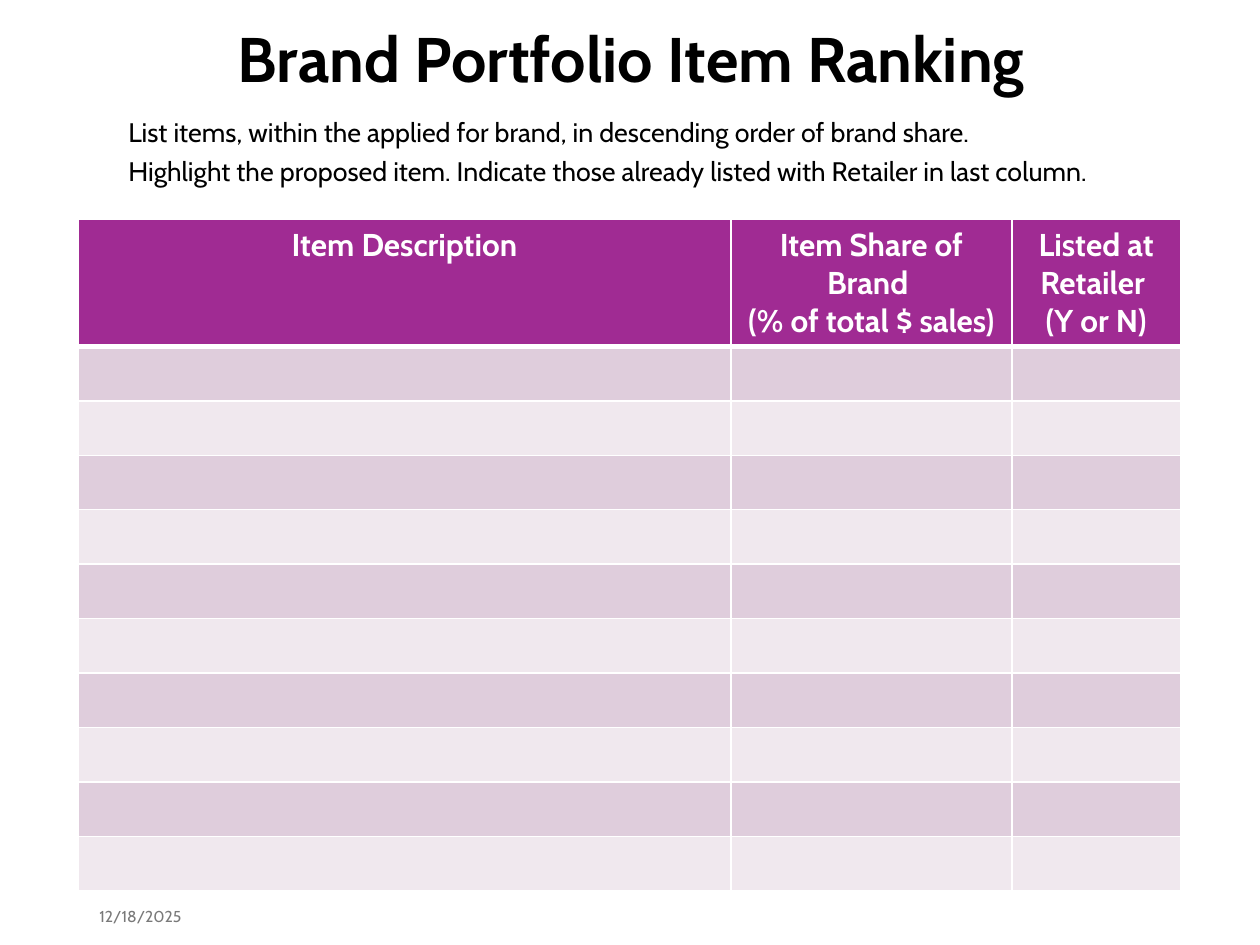
from lxml import etree
from pptx import Presentation
from pptx.dml.color import RGBColor
from pptx.enum.text import MSO_ANCHOR, PP_ALIGN
from pptx.oxml.ns import qn
from pptx.util import Inches, Pt

CENTER = PP_ALIGN.CENTER
LEFT = PP_ALIGN.LEFT
MIDDLE = MSO_ANCHOR.MIDDLE
TOP = MSO_ANCHOR.TOP
FONT = "Cabin"
WHITE, BLACK, GRAY = "FFFFFF", "000000", "797979"
PURPLE, BANDS = "A02B93", ("DFCDDC", "F0E8EE")
TITLE_ONLY = 5

INSTRUCTIONS = [
    "List items, within the applied for brand, in descending order of brand share.",
    "Highlight the proposed item. Indicate those already listed with Retailer in last column.",
]
HEADINGS = [
    ["Item Description"],
    ["Item Share of Brand ", "(% of total $ sales)"],
    ["Listed at Retailer ", "(Y or N)"],
]
COLUMN_WIDTHS = [5.18, 2.23, 1.34]
ITEM_ROWS = 10
HEADER_HEIGHT = 1.01


def color(hex_code):
    """Return the colour for a hex string."""
    return RGBColor.from_string(hex_code)


def write(frame, lines, size, hex_code, bold=False, align=LEFT, spacing=None, before=None):
    """Fill a text frame with one paragraph per line."""
    frame.word_wrap = True
    for index, line in enumerate(lines):
        paragraph = frame.add_paragraph() if index else frame.paragraphs[0]
        paragraph.alignment = align
        if spacing:
            paragraph.line_spacing = spacing
        if before:
            paragraph.space_before = Pt(before)
        run = paragraph.add_run()
        run.text = line
        run.font.name = FONT
        run.font.size = Pt(size)
        run.font.bold = bold
        run.font.color.rgb = color(hex_code)


def add_title(slide, left, top, width, height):
    """Place and format the slide title."""
    title = slide.shapes.title
    title.left, title.top = Inches(left), Inches(top)
    title.width, title.height = Inches(width), Inches(height)
    title.text_frame.vertical_anchor = MIDDLE
    write(title.text_frame, ["Brand Portfolio Item Ranking"], 36, BLACK, True, CENTER, 0.9)


def add_text(slide, left, top, width, height, lines, size, hex_code, anchor=TOP, **spacing):
    """Add a text box in the given box."""
    box = slide.shapes.add_textbox(Inches(left), Inches(top), Inches(width), Inches(height))
    box.text_frame.vertical_anchor = anchor
    write(box.text_frame, lines, size, hex_code, **spacing)


def style_cell(cell, fill, top, bottom):
    """Give a cell its fill and white borders, with top and bottom widths in points."""
    properties = cell._tc.get_or_add_tcPr()
    for tag, points in (("a:lnL", 1), ("a:lnR", 1), ("a:lnT", top), ("a:lnB", bottom)):
        border = etree.SubElement(properties, qn(tag), w=str(Pt(points)))
        solid = etree.SubElement(border, qn("a:solidFill"))
        etree.SubElement(solid, qn("a:srgbClr"), val=WHITE)
    cell.fill.solid()
    cell.fill.fore_color.rgb = color(fill)


def add_ranking(slide, left, top, width, height):
    """Add the ranking table with its heading and banded blank rows."""
    table = slide.shapes.add_table(
        ITEM_ROWS + 1, len(HEADINGS), Inches(left), Inches(top), Inches(width), Inches(height)
    ).table
    for column, column_width in zip(table.columns, COLUMN_WIDTHS):
        column.width = Inches(column_width)
    for index, row in enumerate(table.rows):
        is_header = index == 0
        row.height = Inches(HEADER_HEIGHT if is_header else (height - HEADER_HEIGHT) / ITEM_ROWS)
        fill = PURPLE if is_header else BANDS[(index - 1) % 2]
        for cell in row.cells:
            style_cell(cell, fill, 3 if index == 1 else 1, 3 if is_header else 1)
    for cell, heading in zip(table.rows[0].cells, HEADINGS):
        write(cell.text_frame, heading, 18, WHITE, True, CENTER)


def main():
    """Build and save the slide."""
    deck = Presentation()
    deck.slide_width, deck.slide_height = Inches(10), Inches(7.5)
    slide = deck.slides.add_slide(deck.slide_layouts[TITLE_ONLY])
    add_title(slide, 0.51, 0.16, 9, 0.67)
    add_text(slide, 0.92, 0.92, 8.46, 0.67, INSTRUCTIONS, 15.3, BLACK, spacing=0.8, before=7.5)
    add_ranking(slide, 0.62, 1.74, sum(COLUMN_WIDTHS), 5.33)
    add_text(slide, 0.69, 7.2, 2.25, 0.15, ["12/18/2025"], 9, GRAY, MIDDLE)
    deck.save("out.pptx")


if __name__ == "__main__":
    main()
